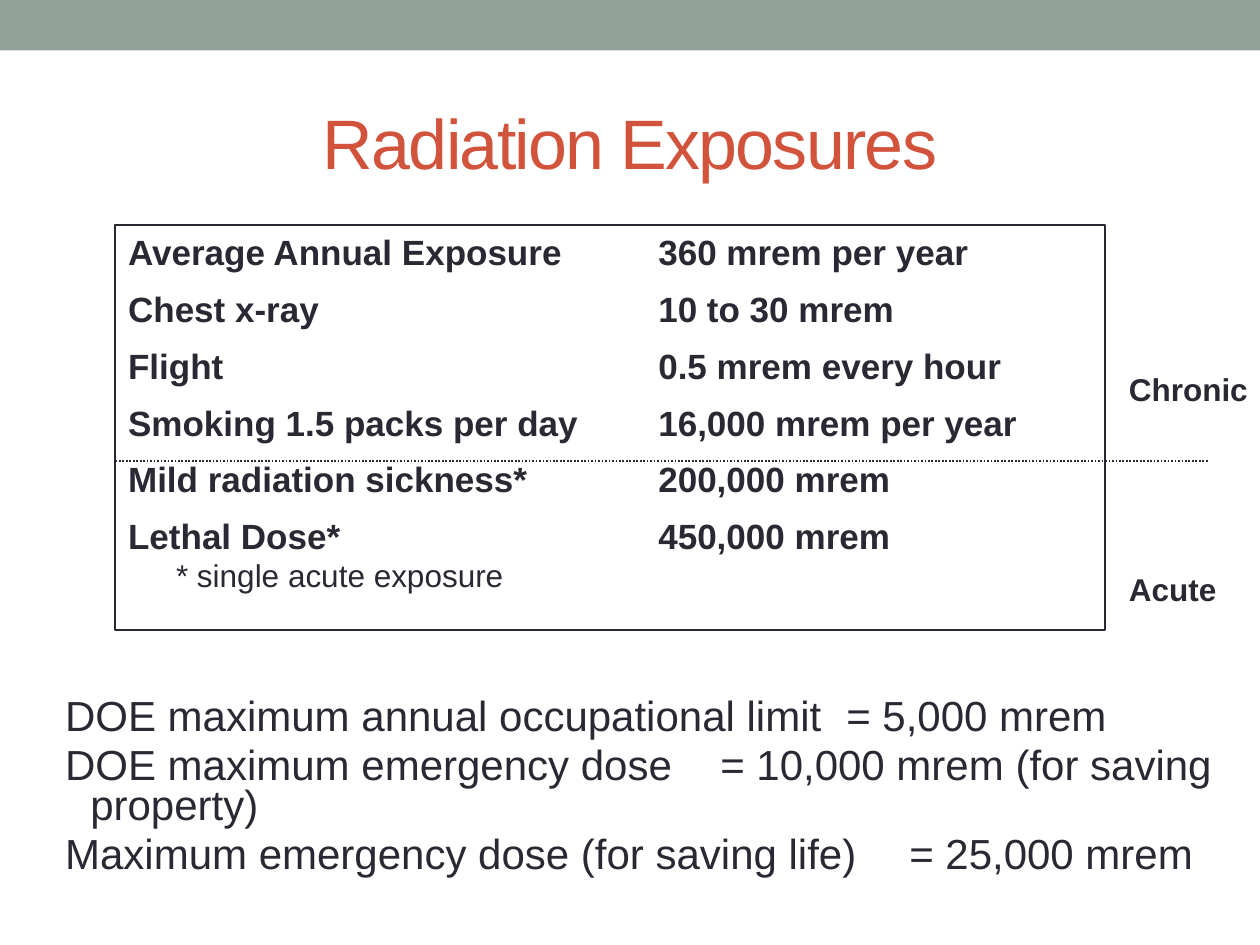
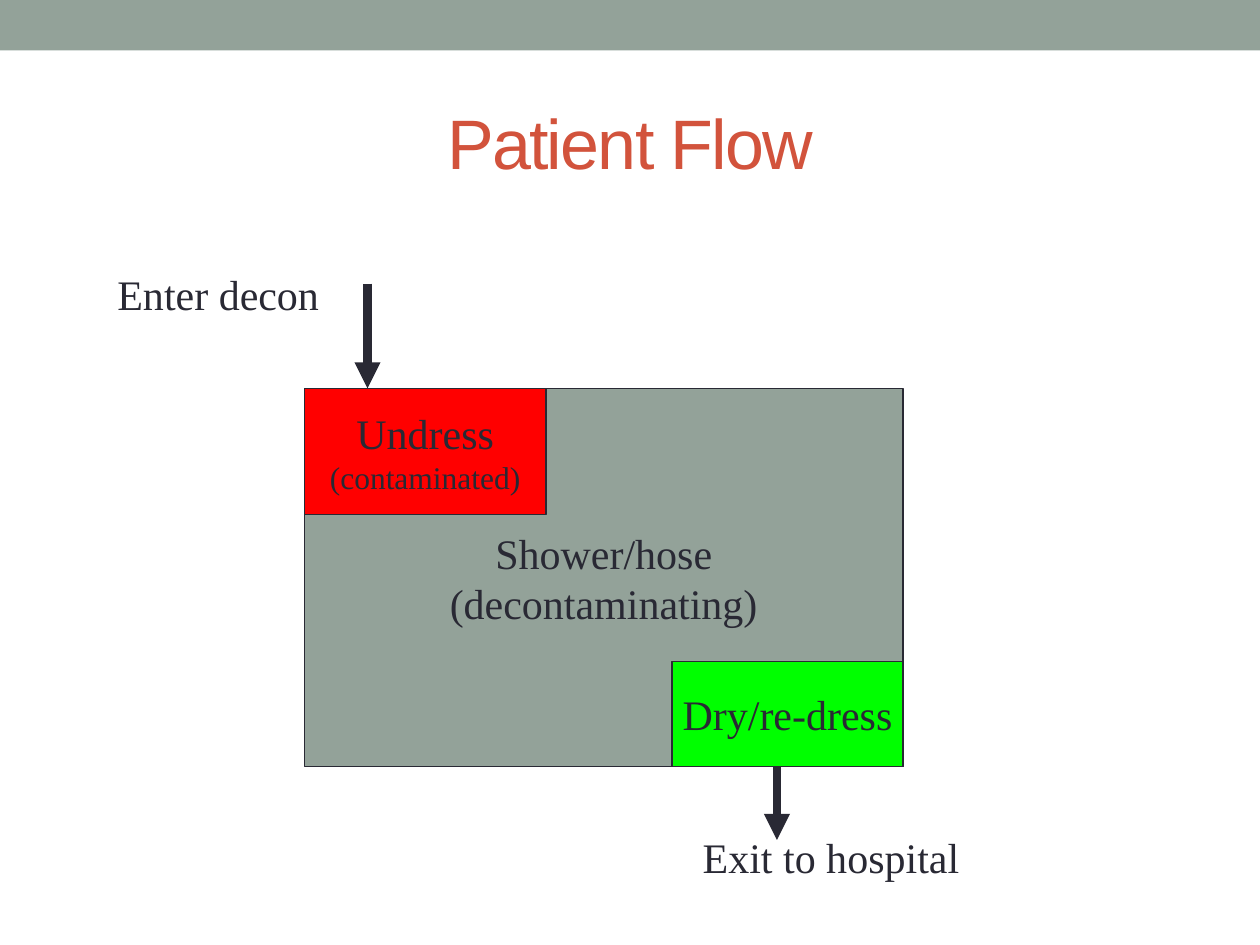
"""Build the radiation exposure and patient flow slides."""
from lxml.etree import SubElement
from pptx import Presentation
from pptx.dml.color import RGBColor
from pptx.enum.dml import MSO_LINE
from pptx.enum.shapes import MSO_CONNECTOR, MSO_SHAPE
from pptx.enum.text import MSO_ANCHOR, MSO_AUTO_SIZE, PP_ALIGN
from pptx.oxml.ns import qn
from pptx.util import Pt

INK, SAGE, RUST = "292934", "93A299", "D2533C"
RED, GREEN = "FF0000", "00FF00"
SANS, SERIF = "Arial", "Times New Roman"
TITLE_ONLY, TITLE_BODY = 5, 1
DOSE_ROW = 32.5

DOSES = [
    ("Average Annual Exposure", "360 mrem per year"),
    ("Chest x-ray", "10 to 30 mrem"),
    ("Flight", "0.5 mrem every hour"),
    ("Smoking 1.5 packs per day", "16,000 mrem per year"),
    ("Mild radiation sickness*", "200,000 mrem"),
    ("Lethal Dose*", "450,000 mrem"),
]
LIMITS = [
    ("DOE maximum annual occupational limit", "= 5,000 mrem", 446),
    ("DOE maximum emergency dose", "= 10,000 mrem (for saving property)", 374),
    ("Maximum emergency dose (for saving life)", "= 25,000 mrem", 482),
]


def color(hex_code):
    return RGBColor.from_string(hex_code)


def place(sp, left, top, width, height):
    sp.left, sp.top, sp.width, sp.height = map(Pt, (left, top, width, height))


def format_runs(p, size, font=SANS, hex_code=INK, bold=False):
    for r in p.runs:
        r.font.size, r.font.name, r.font.bold = Pt(size), font, bold
        r.font.color.rgb = color(hex_code)


def set_hanging(p, hang, tab):
    pPr = p._p.get_or_add_pPr()
    pPr.set("marL", str(Pt(hang)))
    pPr.set("indent", str(Pt(-hang)))
    SubElement(pPr, qn("a:buNone"))
    tabs = SubElement(pPr, qn("a:tabLst"))
    SubElement(tabs, qn("a:tab"), pos=str(Pt(tab)), algn="l")


def add_paragraph(tf, index):
    return tf.add_paragraph() if index else tf.paragraphs[0]


def add_rect(slide, box, fill=None, line=None, width=0.75):
    sp = slide.shapes.add_shape(MSO_SHAPE.RECTANGLE, *map(Pt, box))
    sp.shadow.inherit = False
    if fill:
        sp.fill.solid()
        sp.fill.fore_color.rgb = color(fill)
    else:
        sp.fill.background()
    if line:
        sp.line.color.rgb = color(line)
        sp.line.width = Pt(width)
    else:
        sp.line.fill.background()
    return sp


def add_room(slide, box, fill, lines):
    tf = add_rect(slide, box, fill, INK).text_frame
    tf.word_wrap = False
    tf.vertical_anchor = MSO_ANCHOR.MIDDLE
    for i, (text, size) in enumerate(lines):
        p = add_paragraph(tf, i)
        p.text = text
        p.alignment = PP_ALIGN.CENTER
        format_runs(p, size, SERIF)


def add_label(slide, box, text, size, font, bold=False):
    tf = slide.shapes.add_textbox(*map(Pt, box)).text_frame
    tf.word_wrap = False
    tf.margin_right = 0
    tf.text = text
    format_runs(tf.paragraphs[0], size, font, bold=bold)


def add_line(slide, ends, width, dash=None, arrow=False):
    cn = slide.shapes.add_connector(MSO_CONNECTOR.STRAIGHT, *map(Pt, ends))
    cn.line.color.rgb = color(INK)
    cn.line.width = Pt(width)
    if dash:
        cn.line.dash_style = dash
    spPr = cn._element.spPr
    if arrow:
        SubElement(spPr.find(qn("a:ln")), qn("a:tailEnd"), type="triangle")
    SubElement(spPr, qn("a:effectLst"))


def add_slide(prs, layout, title):
    slide = prs.slides.add_slide(prs.slide_layouts[layout])
    add_rect(slide, (0, 0, 720, 28.8), SAGE)
    sp = slide.shapes.title
    place(sp, 36, 42, 648, 78)
    tf = sp.text_frame
    tf.text = title
    tf.vertical_anchor = MSO_ANCHOR.MIDDLE
    p = tf.paragraphs[0]
    p.alignment = PP_ALIGN.CENTER
    format_runs(p, 40, hex_code=RUST)
    p.runs[0].font._element.set("spc", "-100")
    return slide


def fill_limits(slide):
    sp = slide.placeholders[1]
    place(sp, 30, 396, 690, 124)
    tf = sp.text_frame
    tf.auto_size = MSO_AUTO_SIZE.NONE
    for i, (label, dose, tab) in enumerate(LIMITS):
        p = add_paragraph(tf, i)
        p.text = f"{label}\t{dose}"
        p.line_spacing, p.space_before = 0.8, Pt(5)
        set_hanging(p, 14.4, tab)
        format_runs(p, 24)


def add_doses(slide):
    box = (66, 128.5, 565, DOSE_ROW * len(DOSES))
    table = slide.shapes.add_table(len(DOSES), 2, *map(Pt, box)).table
    table.first_row = table.horz_banding = False
    table.columns[0].width, table.columns[1].width = Pt(303), Pt(262)
    for row, texts in zip(table.rows, DOSES):
        row.height = Pt(DOSE_ROW)
        for cell, text in zip(row.cells, texts):
            cell.fill.background()
            cell.vertical_anchor = MSO_ANCHOR.MIDDLE
            cell.margin_top = cell.margin_bottom = 0
            cell.text = text
            format_runs(cell.text_frame.paragraphs[0], 20, bold=True)


def build_exposures(prs):
    slide = add_slide(prs, TITLE_BODY, "Radiation Exposures")
    fill_limits(slide)
    add_doses(slide)
    add_label(slide, (93.5, 314, 220, 29), "* single acute exposure", 18, SANS)
    add_rect(slide, (65.5, 128.5, 566, 231.5), line=INK, width=1)
    add_line(slide, (66, 263.5, 691, 263.5), 1, dash=MSO_LINE.ROUND_DOT)
    add_label(slide, (638, 208, 82, 29), "Chronic", 18, SANS, True)
    add_label(slide, (638, 322, 64, 29), "Acute", 18, SANS, True)


def build_flow(prs):
    slide = add_slide(prs, TITLE_ONLY, "Patient Flow")
    add_room(slide, (174, 222, 342, 216), SAGE,
             [("Shower/hose", 24), ("(decontaminating)", 24)])
    add_room(slide, (174, 222, 138, 72), RED,
             [("Undress", 24), ("(contaminated)", 18)])
    add_room(slide, (384, 378, 132, 60), GREEN, [("Dry/re-dress", 24)])
    add_line(slide, (210, 162, 210, 222), 5, arrow=True)
    add_line(slide, (444, 438, 444, 480), 5, arrow=True)
    add_label(slide, (394.5, 471.5, 160.5, 36), "Exit to hospital", 24, SERIF)
    add_label(slide, (60, 150, 130, 36), "Enter decon", 24, SERIF)


def main():
    prs = Presentation()
    prs.slide_width, prs.slide_height = Pt(720), Pt(540)
    build_exposures(prs)
    build_flow(prs)
    prs.save("out.pptx")


if __name__ == "__main__":
    main()
